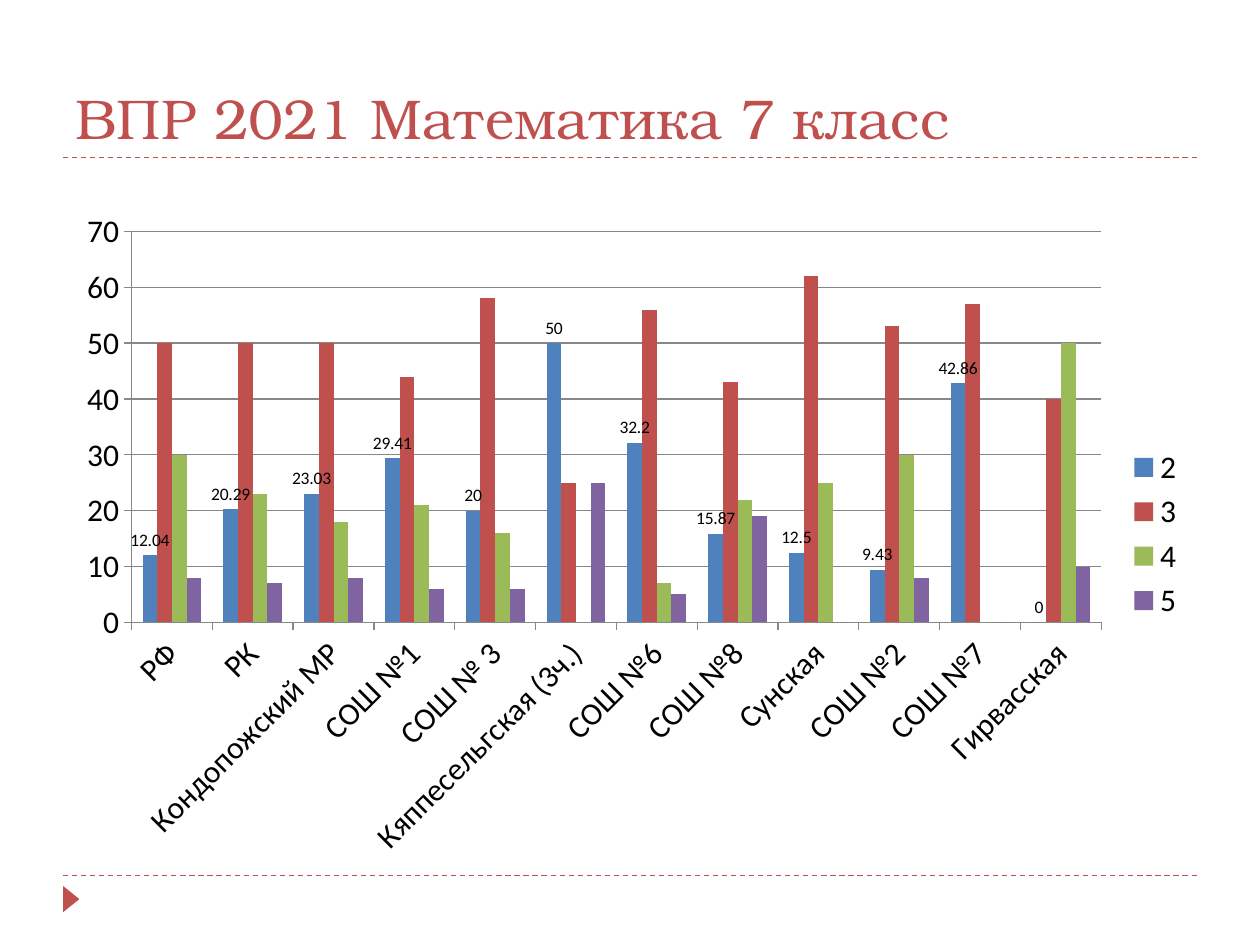
from lxml.etree import SubElement
from pptx import Presentation
from pptx.chart.data import CategoryChartData
from pptx.dml.color import RGBColor
from pptx.enum.chart import (XL_CHART_TYPE, XL_LABEL_POSITION,
                             XL_LEGEND_POSITION, XL_TICK_MARK)
from pptx.enum.dml import MSO_LINE
from pptx.enum.shapes import MSO_CONNECTOR, MSO_SHAPE
from pptx.enum.text import MSO_ANCHOR
from pptx.oxml.ns import qn
from pptx.util import Cm, Pt

COLORS = {"accent": "C0504D", "text": "000000", "grid": "878787",
          "2": "4F81BD", "3": "C0504D", "4": "9BBB59", "5": "8064A2"}
SCHOOLS = ["РФ", "РК", "Кондопожский МР", "СОШ №1", "СОШ № 3",
           "Кяппесельгская (3ч.)", "СОШ №6", "СОШ №8", "Сунская",
           "СОШ №2", "СОШ №7", "Гирвасская"]
MARKS = {
    "2": [12.04, 20.29, 23.03, 29.41, 20, 50, 32.2, 15.87, 12.5, 9.43, 42.86, 0],
    "3": [50, 50, 50, 44, 58, 25, 56, 43, 62, 53, 57, 40],
    "4": [30, 23, 18, 21, 16, 0, 7, 22, 25, 30, 0, 50],
    "5": [8, 7, 8, 6, 6, 25, 5, 19, 0, 8, 0, 10],
}


def color(name):
    return RGBColor.from_string(COLORS[name])


def add_rule(slide, left, top, width):
    rule = slide.shapes.add_connector(
        MSO_CONNECTOR.STRAIGHT, Cm(left), Cm(top), Cm(left + width), Cm(top))
    rule.line.color.rgb = color("accent")
    rule.line.width = Pt(0.75)
    rule.line.dash_style = MSO_LINE.DASH
    SubElement(rule._element.spPr, qn("a:effectLst"))


def add_title(slide, left, top, width, height):
    box = slide.shapes.add_textbox(Cm(left), Cm(top), Cm(width), Cm(height))
    frame = box.text_frame
    frame.word_wrap = True
    frame.vertical_anchor = MSO_ANCHOR.BOTTOM
    frame.text = "ВПР 2021 Математика 7 класс"
    font = frame.paragraphs[0].runs[0].font
    font.name, font.size = "TeX Gyre Bonum", Pt(32)
    font.color.rgb = color("accent")
    add_rule(slide, left, top + height, width)


def add_footer(slide, left, top, width):
    """Draw the lower rule and the marker that points right below it."""
    add_rule(slide, left, top, width)
    mark = slide.shapes.add_shape(
        MSO_SHAPE.ISOSCELES_TRIANGLE,
        Cm(left - 0.1), Cm(top + 0.31), Cm(0.53), Cm(0.33))
    mark.rotation = 90
    mark.shadow.inherit = False
    mark.fill.solid()
    mark.fill.fore_color.rgb = color("accent")
    mark.line.fill.background()


def style_axes(chart):
    for axis in (chart.category_axis, chart.value_axis):
        axis.major_tick_mark = XL_TICK_MARK.OUTSIDE
        axis.minor_tick_mark = XL_TICK_MARK.NONE
        axis.format.line.color.rgb = color("grid")
        axis.format.line.width = Pt(0.75)
        axis.tick_labels.font.size = Pt(18)
    body = chart.category_axis._element.find(qn("c:txPr")).find(qn("a:bodyPr"))
    body.set("rot", str(-45 * 60000))
    scale = chart.value_axis
    scale.minimum_scale, scale.maximum_scale, scale.major_unit = 0, 70, 10
    scale.has_major_gridlines = True
    grid = scale.major_gridlines.format.line
    grid.color.rgb = color("grid")
    grid.width = Pt(0.75)


def add_marks(slide, left, top, width, height):
    """Chart the share of each mark by school."""
    data = CategoryChartData()
    data.categories = SCHOOLS
    for name, shares in MARKS.items():
        data.add_series(name, shares)
    chart = slide.shapes.add_chart(
        XL_CHART_TYPE.COLUMN_CLUSTERED,
        Cm(left), Cm(top), Cm(width), Cm(height), data).chart
    chart.has_title = False
    chart.font.name, chart.font.size = "Calibri", Pt(18)
    chart.font.color.rgb = color("text")
    chart.has_legend = True
    chart.legend.position = XL_LEGEND_POSITION.RIGHT
    chart.legend.include_in_layout = False
    style_axes(chart)

    plot = chart.plots[0]
    plot.gap_width, plot.overlap = 150, 0
    plot.vary_by_categories = False
    for series in plot.series:
        series.format.fill.solid()
        series.format.fill.fore_color.rgb = color(series.name)
    labels = plot.series[0].data_labels
    labels.show_value = True
    labels.position = XL_LABEL_POSITION.OUTSIDE_END
    labels.font.size = Pt(10)


def main():
    deck = Presentation()
    deck.slide_width, deck.slide_height = Cm(25.4), Cm(19.05)
    slide = deck.slides.add_slide(deck.slide_layouts[6])
    add_footer(slide, 1.27, 17.65, 22.86)
    add_title(slide, 1.27, 0.43, 22.86, 2.74)
    add_marks(slide, 1.3, 4.01, 22.83, 13.51)
    deck.save("out.pptx")


if __name__ == "__main__":
    main()
